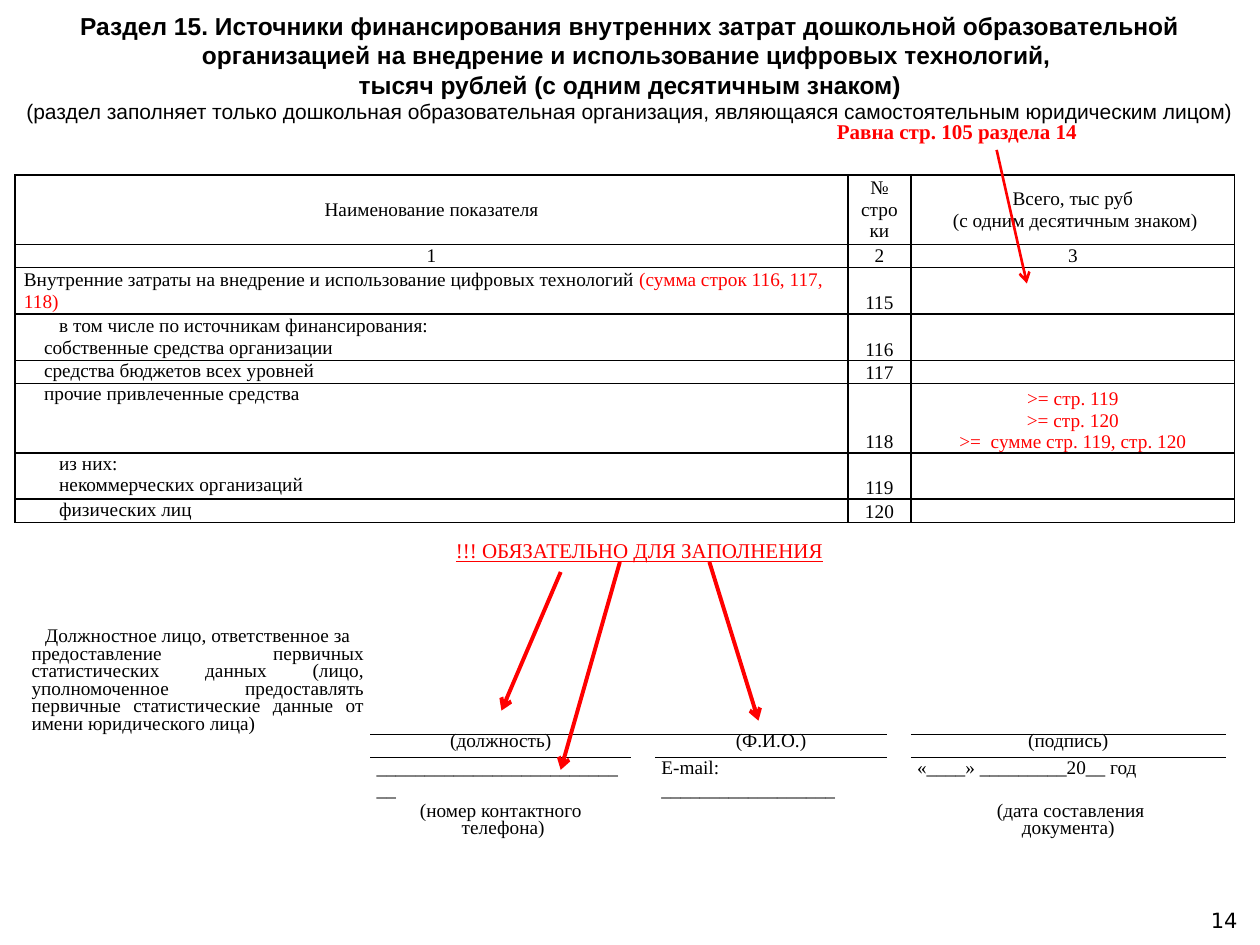
from dataclasses import dataclass
from typing import Any

from lxml import etree
from pptx import Presentation
from pptx.dml.color import RGBColor
from pptx.enum.shapes import MSO_CONNECTOR
from pptx.enum.text import MSO_ANCHOR, PP_ALIGN
from pptx.oxml.ns import qn
from pptx.util import Inches, Pt

MID, RIGHT, FULL = PP_ALIGN.CENTER, PP_ALIGN.RIGHT, PP_ALIGN.JUSTIFY
TOP, CENTER, BASE = MSO_ANCHOR.TOP, MSO_ANCHOR.MIDDLE, MSO_ANCHOR.BOTTOM
LINE = MSO_CONNECTOR.STRAIGHT
BLACK, RED = "000000", "FF0000"
PLAIN = "{2D5ABB26-0587-4C30-8999-92F81FD0307C}"


def color(code):
    return RGBColor.from_string(code)


@dataclass
class Page:
    """Hold the text style and the slide being built."""
    slide: Any
    face: str = "Times New Roman"
    size: int = 11

    def fill(self, frame, paras):
        for i, (parts, style) in enumerate(paras):
            para = frame.paragraphs[0] if i == 0 else frame.add_paragraph()
            style = dict(style)
            ink = style.pop("ink", BLACK)
            font = {"name": self.face, "size": Pt(self.size)} | style.pop("font", {})
            if "indent" in style:
                para._p.get_or_add_pPr().set("marL", str(Inches(style.pop("indent"))))
            for key, value in style.items():
                setattr(para, key, value)
            if isinstance(parts, str):
                parts = [(parts, ink)]
            for text, tint in parts:
                for j, line in enumerate(text.split("\n")):
                    if j:
                        para.add_line_break()
                    run = para.add_run()
                    run.text = line
                    for key, value in font.items():
                        setattr(run.font, key, value)
                    run.font.color.rgb = color(tint)

    def text(self, box, paras, anchor=TOP):
        frame = self.slide.shapes.add_textbox(*map(Inches, box)).text_frame
        frame.word_wrap = True
        frame.vertical_anchor = anchor
        self.fill(frame, paras)

    def arrow(self, start, end, width):
        link = self.slide.shapes.add_connector(LINE, *map(Inches, start + end))
        link.line.color.rgb = color(RED)
        link.line.width = Pt(width)
        etree.SubElement(link.line._get_or_add_ln(), qn("a:tailEnd"), type="arrow")
        etree.SubElement(link._element.spPr, qn("a:effectLst"))

    def grid(self, left, top, cols, rows):
        box = map(Inches, (left, top, sum(cols), sum(rows)))
        table = self.slide.shapes.add_table(len(rows), len(cols), *box).table
        table.first_row = table.horz_banding = False
        table._tbl.tblPr.find(qn("a:tableStyleId")).text = PLAIN
        for col, width in zip(table.columns, cols):
            col.width = Inches(width)
        for row, height in zip(table.rows, rows):
            row.height = Inches(height)
        return table

    def cell(self, cell, paras, anchor=TOP, pad=0.07, sides=""):
        form = {"margin_left": Inches(pad), "margin_right": Inches(pad),
                "margin_top": 0, "margin_bottom": 0, "vertical_anchor": anchor}
        for key, value in form.items():
            setattr(cell, key, value)
        for side in sides:
            edge = etree.SubElement(cell._tc.tcPr, qn("a:ln" + side), w=str(Pt(1)))
            paint = etree.SubElement(edge, qn("a:solidFill"))
            etree.SubElement(paint, qn("a:srgbClr"), val=BLACK)
        cell.fill.background()
        self.fill(cell.text_frame, paras)
        if not paras:
            etree.SubElement(cell.text_frame.paragraphs[0]._p, qn("a:endParaRPr"),
                             sz=str(self.size * 100))


def costs(page):
    def mid(text, ink=BLACK):
        return [(text, {"alignment": MID, "ink": ink})]

    def item(text, indent):
        return (text, {"indent": indent})

    sums = ">= стр. 119", ">= стр. 120", ">=  сумме стр. 119, стр. 120"
    total = [("Внутренние затраты на внедрение и использование цифровых технологий ", BLACK),
             ("(сумма строк 116, 117, 118)", RED)]
    data = [
        (0.51, mid("Наименование показателя"), "№ строки",
         mid("Всего, тыс руб\n (с одним десятичным знаком)")),
        (0.17, mid("1"), "2", mid("3")),
        (0.34, [(total, {})], "115", []),
        (0.34, [item("в том числе по источникам финансирования:", 0.28),
                item("собственные средства организации", 0.16)], "116", []),
        (0.17, [item("средства бюджетов всех уровней", 0.16)], "117", []),
        (0.51, [item("прочие привлеченные средства", 0.16)], "118",
         [para for text in sums for para in mid(text, RED)]),
        (0.34, [item("из них:", 0.28), item("некоммерческих организаций", 0.28)], "119", []),
        (0.17, [item("физических лиц", 0.28)], "120", []),
    ]
    table = page.grid(0.12, 1.39, (6.61, 0.5, 2.57), [row[0] for row in data])
    for i, (_, name, code, value) in enumerate(data):
        low = CENTER if i < 2 else BASE
        anchors = (CENTER if i < 4 else TOP, low, low)
        for j, paras in enumerate((name, mid(code), value)):
            page.cell(table.cell(i, j), paras, anchors[j], sides="LRTB")


def signs(page):
    tight = {"alignment": MID, "line_spacing": Pt(10)}
    duty = [("Должностное лицо, ответственное за", tight),
            ("предоставление первичных статистических данных (лицо, уполномоченное "
             "предоставлять первичные статистические данные от имени юридического лица)",
             tight | {"alignment": FULL})]
    filled = {
        (0, 0): duty,
        (1, 1): [("(должность)", tight)],
        (1, 3): [("(Ф.И.О.)", tight)],
        (1, 5): [("(подпись)", tight)],
        (2, 1): [("_" * 27, {})],
        (2, 3): [("E-mail: " + "_" * 18, {})],
        (2, 5): [("«____» _________20__ год", {})],
        (3, 1): [("(номер контактного\n телефона)", tight | {"space_after": Pt(6)})],
        (3, 5): [(" (дата составления", tight), ("документа)", tight)],
    }
    cols, rows = (2.74, 2.07, 0.19, 1.84, 0.19, 2.5), (1.06, 0.17, 0.34, 0.27)
    table = page.grid(0.2, 4.77, cols, rows)
    for i in range(len(rows)):
        for j in range(len(cols)):
            ruled = i == 1 and j % 2
            page.cell(table.cell(i, j), filled.get((i, j), []),
                      TOP if i else BASE, 0.05, "T" if ruled else "")
    for first, last in ((1, 3), (4, 5)):
        table.cell(0, first).merge(table.cell(0, last))


def main():
    deck = Presentation()
    deck.slide_width, deck.slide_height = Inches(10), Inches(7.5)
    page = Page(deck.slides.add_slide(deck.slide_layouts[6]))

    page.text((7.59, 7.1, 2.33, 0.4), [
        ("14", {"alignment": RIGHT, "font": {"name": "DejaVu Sans", "size": Pt(12)}})], CENTER)
    costs(page)
    page.text((0, 0.03, 10, 1.01), [
        ("Раздел 15. Источники финансирования внутренних затрат дошкольной образовательной "
         "организацией на внедрение и использование цифровых технологий, \n"
         "тысяч рублей (с одним десятичным знаком)",
         {"alignment": MID, "font": {"name": "Arial", "size": Pt(14), "bold": True}}),
        ("(раздел заполняет только дошкольная образовательная организация, "
         "являющаяся самостоятельным юридическим лицом)",
         {"alignment": MID, "font": {"name": "Arial", "size": Pt(12)}})], CENTER)
    page.text((5.9, 0.89, 3.39, 0.3), [
        ("Равна стр. 105 раздела 14",
         {"alignment": MID, "ink": RED, "font": {"size": Pt(12), "bold": True}})])
    page.arrow((7.91, 1.19), (8.15, 2.25), 1.5)
    signs(page)
    page.text((1.77, 4.22, 6.61, 0.3), [
        ("!!! ОБЯЗАТЕЛЬНО ДЛЯ ЗАПОЛНЕНИЯ",
         {"alignment": MID, "ink": RED, "font": {"size": Pt(12), "underline": True}})])
    for start, end in (((4.45, 4.54), (3.98, 5.64)), ((5.63, 4.46), (6.02, 5.72)),
                       ((4.92, 4.46), (4.45, 6.11))):
        page.arrow(start, end, 2.25)
    deck.save("out.pptx")


if __name__ == "__main__":
    main()
